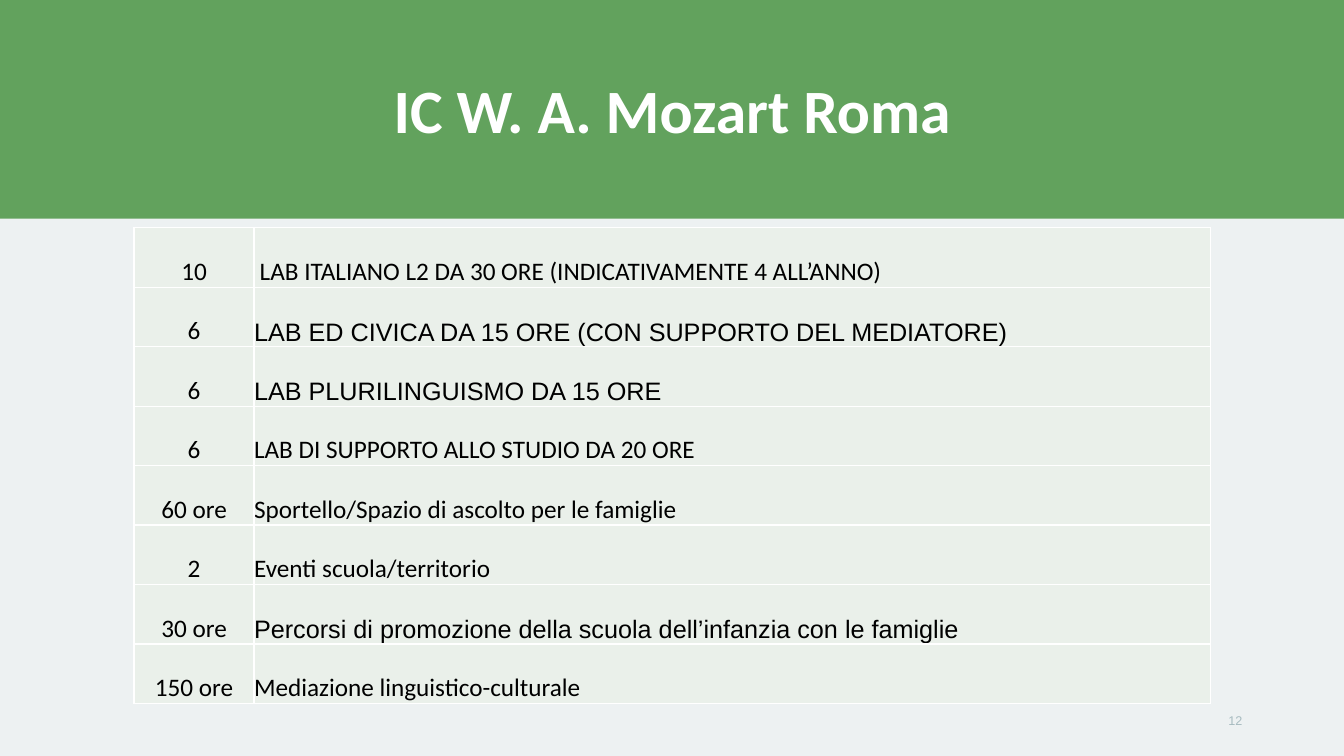
from lxml.etree import SubElement
from pptx import Presentation
from pptx.dml.color import RGBColor
from pptx.enum.shapes import MSO_SHAPE
from pptx.enum.text import MSO_ANCHOR, PP_ALIGN
from pptx.oxml.ns import qn
from pptx.util import Inches, Pt


def color(value):
    return RGBColor.from_string(value)


class SlideBuilder:
    """Hold the style and the current slide, and add its elements."""

    background = "EDF1F2"
    green = "62A25D"
    cell_fill = "EAF0EA"
    white = "FFFFFF"
    black = "000000"
    number_gray = "A7BBC0"

    def __init__(self, presentation):
        self.slide = presentation.slides.add_slide(presentation.slide_layouts[6])
        fill = self.slide.background.fill
        fill.solid()
        fill.fore_color.rgb = color(self.background)

    def fill_paragraph(self, frame, text, size, font_color, alignment, font="Calibri", bold=False):
        paragraph = frame.paragraphs[0]
        paragraph.text = text
        paragraph.alignment = alignment
        paragraph.font.name = font
        paragraph.font.size = Pt(size)
        paragraph.font.bold = bold
        paragraph.font.color.rgb = color(font_color)
        return paragraph

    def band(self, left, top, width, height):
        shape = self.slide.shapes.add_shape(
            MSO_SHAPE.RECTANGLE, Inches(left), Inches(top), Inches(width), Inches(height))
        shape.shadow.inherit = False
        shape.fill.solid()
        shape.fill.fore_color.rgb = color(self.green)
        shape.line.fill.background()

    def text(self, left, top, width, height, text, size, font_color, alignment, **style):
        box = self.slide.shapes.add_textbox(
            Inches(left), Inches(top), Inches(width), Inches(height))
        frame = box.text_frame
        frame.word_wrap = True
        frame.vertical_anchor = MSO_ANCHOR.MIDDLE
        return self.fill_paragraph(frame, text, size, font_color, alignment, **style)

    def borders(self, cell):
        properties = cell._tc.get_or_add_tcPr()
        for side in ("a:lnL", "a:lnR", "a:lnT", "a:lnB"):
            line = SubElement(properties, qn(side), w=str(Pt(1)))
            solid = SubElement(line, qn("a:solidFill"))
            SubElement(solid, qn("a:srgbClr"), val=self.white)

    def cell(self, cell, text, alignment, font):
        self.borders(cell)
        cell.fill.solid()
        cell.fill.fore_color.rgb = color(self.cell_fill)
        cell.margin_left = cell.margin_right = cell.margin_top = cell.margin_bottom = 0
        cell.vertical_anchor = MSO_ANCHOR.BOTTOM
        self.fill_paragraph(cell.text_frame, text, 18, self.black, alignment, font)

    def table(self, left, top, column_widths, row_height, rows):
        table = self.slide.shapes.add_table(
            len(rows), len(column_widths), Inches(left), Inches(top),
            Inches(sum(column_widths)), Inches(row_height * len(rows))).table
        table.first_row = False
        table.horz_banding = False
        for column, width in zip(table.columns, column_widths):
            column.width = Inches(width)
        for row, (amount, activity, font) in zip(table.rows, rows):
            row.height = Inches(row_height)
            self.cell(row.cells[0], amount, PP_ALIGN.CENTER, "Calibri")
            self.cell(row.cells[1], activity, PP_ALIGN.LEFT, font)


ACTIVITIES = [
    ("10", " LAB ITALIANO L2 DA 30 ORE (INDICATIVAMENTE 4 ALL’ANNO)", "Calibri"),
    ("6", "LAB ED CIVICA DA 15 ORE (CON SUPPORTO DEL MEDIATORE)", "Arial"),
    ("6", "LAB PLURILINGUISMO DA 15 ORE", "Arial"),
    ("6", "LAB DI SUPPORTO ALLO STUDIO DA 20 ORE", "Calibri"),
    ("60 ore", "Sportello/Spazio di ascolto per le famiglie", "Calibri"),
    ("2", "Eventi scuola/territorio", "Calibri"),
    ("30 ore", "Percorsi di promozione della scuola dell’infanzia con le famiglie", "Arial"),
    ("150 ore", "Mediazione linguistico-culturale", "Calibri"),
]


def main():
    presentation = Presentation()
    presentation.slide_width = Inches(13.33)
    presentation.slide_height = Inches(7.5)
    builder = SlideBuilder(presentation)
    builder.band(0, 0, 13.33, 2.17)
    title = builder.text(0.92, 0.4, 11.5, 1.45, "IC W. A. Mozart Roma", 44,
                         builder.white, PP_ALIGN.CENTER, bold=True)
    title.line_spacing = 0.9
    builder.text(9.42, 6.95, 3, 0.4, "12", 9, builder.number_gray,
                 PP_ALIGN.RIGHT, font="Arial")
    builder.table(1.33, 2.26, [1.19, 9.49], 0.59, ACTIVITIES)
    presentation.save("out.pptx")


if __name__ == "__main__":
    main()
